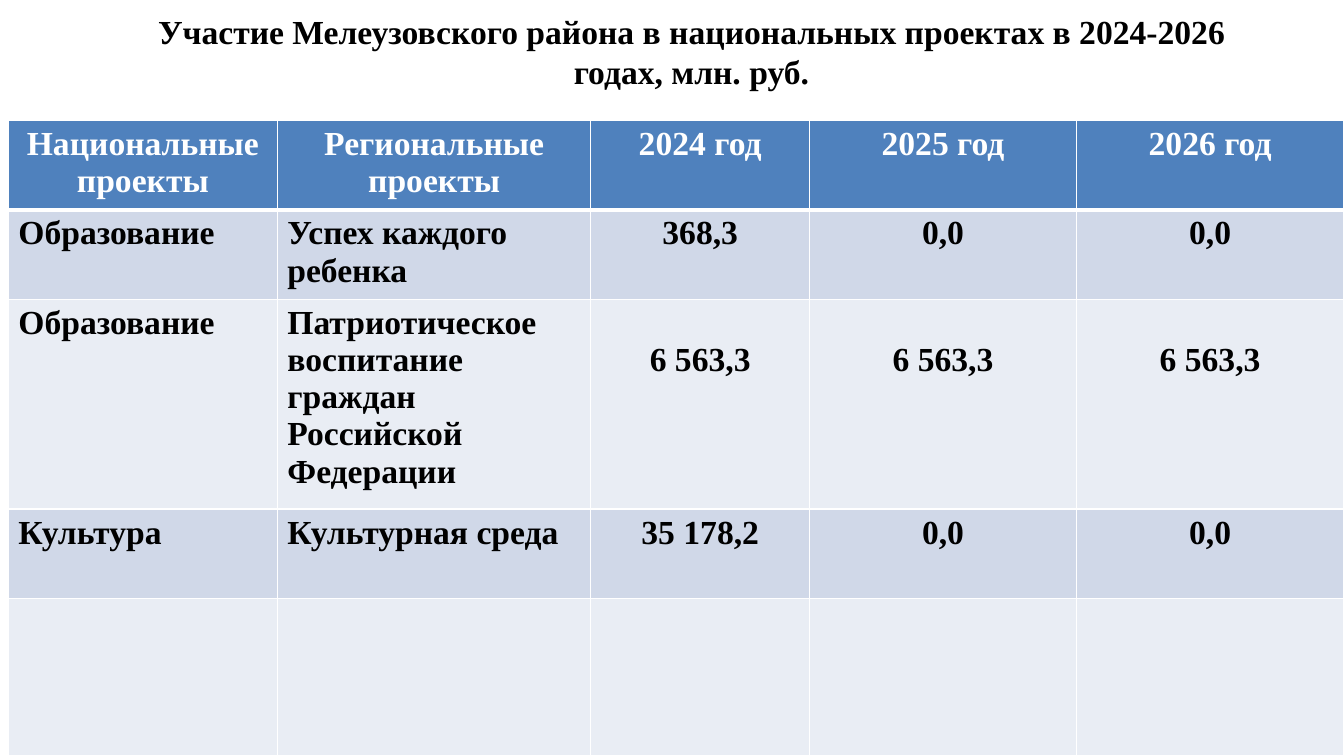
from lxml.etree import SubElement
from pptx import Presentation
from pptx.dml.color import RGBColor
from pptx.enum.text import MSO_ANCHOR, PP_ALIGN
from pptx.oxml.ns import qn
from pptx.util import Cm, Pt

COLORS = {
    "text": "000000",
    "white": "FFFFFF",
    "header": "4F81BD",
    "odd_row": "D0D8E8",
    "even_row": "E9EDF4",
}
FONT_NAME = "Times New Roman"
FONT_SIZE = 24
TITLE = "Участие Мелеузовского района в национальных проектах в 2024-2026 годах, млн. руб."
COLUMN_WIDTHS = [6.78, 7.9, 5.51, 6.73, 6.73]
ROW_HEIGHTS = [2.26, 2.26, 5.28, 2.26, 3.96]
PROJECTS = [
    ["Национальные проекты", "Региональные проекты", "2024 год", "2025 год", "2026 год"],
    ["Образование", "Успех каждого ребенка", "368,3", "0,0", "0,0"],
    ["Образование", "Патриотическое воспитание граждан Российской Федерации",
     "6 563,3", "6 563,3", "6 563,3"],
    ["Культура", "Культурная среда", "35 178,2", "0,0", "0,0"],
    [""] * 5,
]
NAME_COLUMNS = 2
PATRIOTIC_ROW = 2


def color(name):
    return RGBColor.from_string(COLORS[name])


def write_text(text_frame, text, color_name, alignment):
    text_frame.text = text
    paragraph = text_frame.paragraphs[0]
    paragraph.alignment = alignment
    for run in paragraph.runs:
        run.font.name = FONT_NAME
        run.font.size = Pt(FONT_SIZE)
        run.font.bold = True
        run.font.color.rgb = color(color_name)


def add_title(slide):
    title = slide.shapes.title
    title.left, title.top, title.width, title.height = Cm(2.82), Cm(0.69), Cm(29.21), Cm(1.19)
    text_frame = title.text_frame
    text_frame.word_wrap = True
    text_frame.vertical_anchor = MSO_ANCHOR.MIDDLE
    text_frame.margin_left = text_frame.margin_right = Cm(0.3)
    text_frame.margin_top = text_frame.margin_bottom = Cm(0.15)
    write_text(text_frame, TITLE, "text", PP_ALIGN.CENTER)


def set_borders(cell, widths):
    properties = cell._tc.get_or_add_tcPr()
    for index, (side, width) in enumerate(widths.items()):
        line = properties.makeelement(qn(f"a:{side}"), {"w": str(Pt(width))})
        fill = SubElement(line, qn("a:solidFill"))
        SubElement(fill, qn("a:srgbClr"), val=COLORS["white"])
        properties.insert(index, line)


def format_cell(cell, text, row, column):
    is_header = row == 0
    fill_name = "header" if is_header else "odd_row" if row % 2 else "even_row"
    cell.fill.solid()
    cell.fill.fore_color.rgb = color(fill_name)
    set_borders(cell, {
        "lnL": 1,
        "lnR": 1,
        "lnT": 3 if row == 1 else 1,
        "lnB": 3 if is_header else 1,
    })
    is_value = column >= NAME_COLUMNS
    if is_value and row == PATRIOTIC_ROW:
        cell.margin_top = Cm(1.07)
    alignment = PP_ALIGN.CENTER if is_header or is_value else PP_ALIGN.LEFT
    write_text(cell.text_frame, text, "white" if is_header else "text", alignment)


def add_projects_table(slide):
    frame = slide.shapes.add_table(
        len(ROW_HEIGHTS), len(COLUMN_WIDTHS), Cm(0.21), Cm(3.03),
        Cm(sum(COLUMN_WIDTHS)), Cm(sum(ROW_HEIGHTS)))
    table = frame.table
    for column, width in zip(table.columns, COLUMN_WIDTHS):
        column.width = Cm(width)
    for row, height in zip(table.rows, ROW_HEIGHTS):
        row.height = Cm(height)
    for row, texts in enumerate(PROJECTS):
        for column, text in enumerate(texts):
            format_cell(table.cell(row, column), text, row, column)


def main():
    presentation = Presentation()
    presentation.slide_width, presentation.slide_height = Cm(33.87), Cm(19.05)
    slide = presentation.slides.add_slide(presentation.slide_layouts[5])
    add_title(slide)
    add_projects_table(slide)
    presentation.save("out.pptx")


if __name__ == "__main__":
    main()
